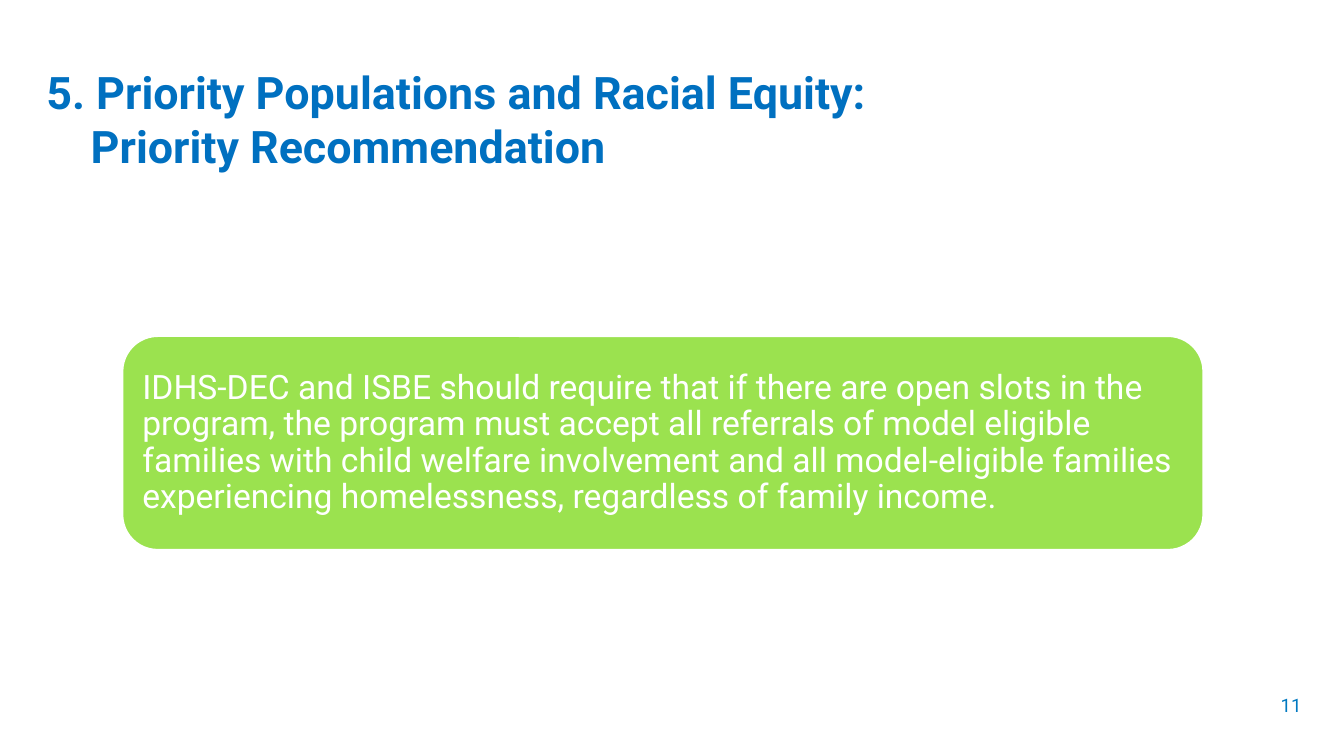
from pptx import Presentation
from pptx.dml.color import RGBColor
from pptx.enum import shapes, text
from pptx.util import Inches, Pt

TITLE_BLUE = RGBColor(0x00, 0x70, 0xC0)
NUMBER_BLUE = RGBColor(0x00, 0x79, 0xC1)
GREEN = RGBColor(0x9B, 0xE2, 0x4F)
WHITE = RGBColor(0xFF, 0xFF, 0xFF)


def fill_text(shape, lines, size, color, inset, anchor, align=text.PP_ALIGN.LEFT, bold=False):
    """Write one paragraph per line and return the paragraphs."""
    frame = shape.text_frame
    frame.word_wrap = True
    frame.vertical_anchor = anchor
    frame.margin_left = frame.margin_right = Inches(inset)
    frame.margin_top = frame.margin_bottom = Inches(inset)
    frame.text = "\n".join(lines)
    for paragraph in frame.paragraphs:
        paragraph.alignment = align
        for run in paragraph.runs:
            run.font.name = "Roboto"
            run.font.size = Pt(size)
            run.font.bold = bold
            run.font.color.rgb = color
    return frame.paragraphs


deck = Presentation()
deck.slide_width, deck.slide_height = Inches(13.33), Inches(7.5)
slide = deck.slides.add_slide(deck.slide_layouts[6])

# Title, with its second line indented past the number
title = slide.shapes.add_textbox(Inches(0.33), Inches(0.51), Inches(12.42), Inches(0.94))
title_lines = fill_text(
    title,
    ["5. Priority Populations and Racial Equity:", "Priority Recommendation"],
    32, TITLE_BLUE, 0.13, text.MSO_ANCHOR.TOP, bold=True)
title_lines[1]._p.get_or_add_pPr().set("marL", str(Inches(0.44)))

# Recommendation card
card = slide.shapes.add_shape(
    shapes.MSO_SHAPE.ROUNDED_RECTANGLE,
    Inches(1.21), Inches(3.33), Inches(10.73), Inches(2.13))
card.shadow.inherit = False
card.fill.solid()
card.fill.fore_color.rgb = GREEN
card.line.color.rgb = WHITE
card.line.width = Pt(2)
recommendation = fill_text(
    card,
    ["IDHS-DEC and ISBE should require that if there are open slots in the program, "
     "the program must accept all referrals of model eligible families with child "
     "welfare involvement and all model-eligible families experiencing homelessness, "
     "regardless of family income."],
    24, WHITE, 0.1, text.MSO_ANCHOR.MIDDLE)
recommendation[0].line_spacing = 0.9

# Page number
page_number = slide.shapes.add_textbox(Inches(6.83), Inches(6.69), Inches(6.21), Inches(0.57))
number_line = fill_text(
    page_number, ["11"], 13.3, NUMBER_BLUE, 0.13,
    text.MSO_ANCHOR.MIDDLE, text.PP_ALIGN.RIGHT)
number_line[0].line_spacing = 1.15
number_line[0].space_before = Pt(9.3)

deck.save("out.pptx")
